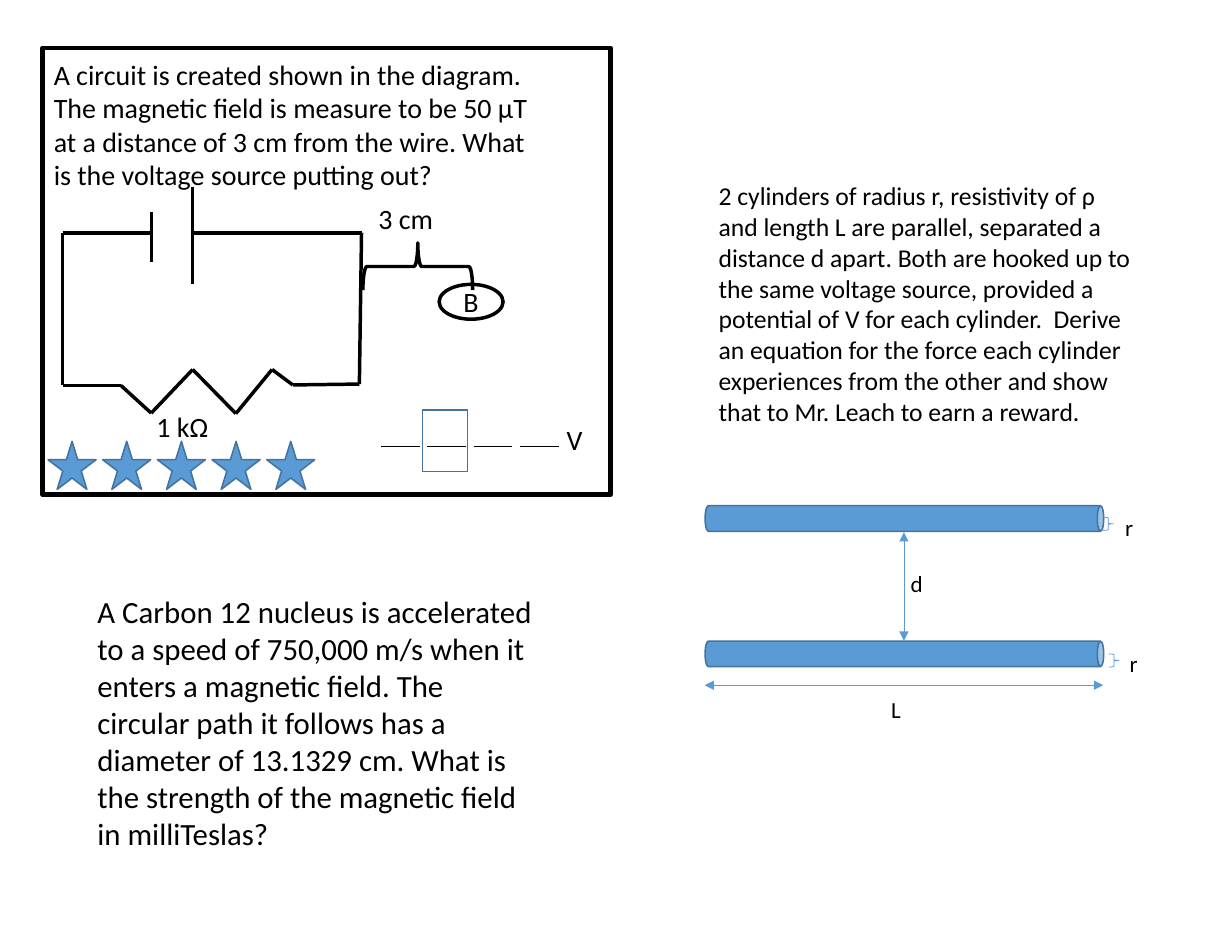
from dataclasses import dataclass
from itertools import pairwise

from lxml import etree
from pptx import Presentation
from pptx.dml.color import RGBColor
from pptx.enum.shapes import MSO_CONNECTOR, MSO_SHAPE as Shp
from pptx.enum.text import MSO_ANCHOR, PP_ALIGN
from pptx.oxml.ns import qn
from pptx.util import Cm, Pt

BLACK, WHITE, BLUE, DARK_BLUE = "000000", "FFFFFF", "5B9BD5", "43739E"


@dataclass
class Label:
    text: str
    x: float
    y: float
    w: float
    h: float
    size: float = 18
    wrap: bool = True


@dataclass
class Figure:
    kind: Shp
    x: float
    y: float
    w: float
    h: float
    line: str
    weight: float
    fill: str | None = None
    rotation: float = 0


def color(hex_code: str) -> RGBColor:
    return RGBColor.from_string(hex_code)


def style_text(p, size: float) -> None:
    for r in p.runs:
        r.font.name = "Calibri"
        r.font.size = Pt(size)
        r.font.color.rgb = color(BLACK)


def add_label(s, label: Label) -> None:
    box = s.shapes.add_textbox(Cm(label.x), Cm(label.y), Cm(label.w), Cm(label.h))
    tf = box.text_frame
    tf.word_wrap = label.wrap
    tf.text = label.text
    style_text(tf.paragraphs[0], label.size)


def add_figure(s, fig: Figure):
    sp = s.shapes.add_shape(fig.kind, Cm(fig.x), Cm(fig.y), Cm(fig.w), Cm(fig.h))
    sp.shadow.inherit = False
    sp.rotation = fig.rotation
    sp.line.color.rgb = color(fig.line)
    sp.line.width = Pt(fig.weight)
    if fig.fill:
        sp.fill.solid()
        sp.fill.fore_color.rgb = color(fig.fill)
    else:
        sp.fill.background()
    return sp


def add_line(s, start: tuple[float, float], end: tuple[float, float],
             line: str, weight: float, arrows: bool = False) -> None:
    cx = s.shapes.add_connector(MSO_CONNECTOR.STRAIGHT, *map(Cm, start + end))
    cx.line.color.rgb = color(line)
    cx.line.width = Pt(weight)
    if arrows:
        ln = cx.line._get_or_add_ln()
        for tag in ("a:headEnd", "a:tailEnd"):
            etree.SubElement(ln, qn(tag), type="triangle")
    etree.SubElement(cx._element.spPr, qn("a:effectLst"))


def draw_circuit(s) -> None:
    add_figure(s, Figure(Shp.RECTANGLE, 0.97, 1.09, 12.88, 10.13, BLACK, 3))
    add_label(s, Label(
        "A circuit is created shown in the diagram. The magnetic field is measure "
        "to be 50 µT at a distance of 3 cm from the wire. What is the voltage "
        "source putting out?", 0.97, 1.17, 11.43, 3.33))

    # Battery plates
    add_line(s, (3.43, 4.8), (3.43, 5.94), BLACK, 2.25)
    add_line(s, (4.37, 4.24), (4.37, 6.45), BLACK, 2.25)

    # Wire from plate to plate, through the resistor zigzag
    wire = [(4.37, 5.28), (8.2, 5.28), (8.15, 8.71), (6.64, 8.73),
            (6.17, 8.38), (5.35, 9.38), (4.37, 8.38), (3.43, 9.37),
            (2.74, 8.74), (1.42, 8.74), (1.42, 5.28), (3.43, 5.28)]
    for start, end in pairwise(wire):
        add_line(s, start, end, BLACK, 2.25)

    # Field point and its distance from the wire
    point = add_figure(s, Figure(Shp.OVAL, 9.96, 6.45, 1.45, 0.79, BLACK, 2.25, WHITE))
    tf = point.text_frame
    tf.text = "B"
    tf.vertical_anchor = MSO_ANCHOR.MIDDLE
    tf.paragraphs[0].alignment = PP_ALIGN.CENTER
    style_text(tf.paragraphs[0], 18)
    add_label(s, Label("1 kΩ", 3.3, 9.17, 3.78, 1.02))
    add_figure(s, Figure(Shp.LEFT_BRACE, 8.94, 4.8, 1.07, 2.49, BLACK, 2.25, rotation=90))
    add_label(s, Label("3 cm", 8.33, 4.45, 3.66, 1.02))


def draw_cylinders(s) -> None:
    add_label(s, Label(
        "2 cylinders of radius r, resistivity of ρ and length L are parallel, "
        "separated a distance d apart. Both are hooked up to the same voltage "
        "source, provided a potential of V for each cylinder.  Derive an equation "
        "for the force each cylinder experiences from the other and show that to "
        "Mr. Leach to earn a reward.", 16.05, 3.96, 9.86, 5.89, 16.5))
    for y in (7.24, 10.31):
        add_figure(s, Figure(Shp.CAN, 20.22, y, 0.58, 9.04, DARK_BLUE, 1, BLUE, 90))

    # Dimensions d, L and r
    add_line(s, (20.5, 12.07), (20.5, 14.53), BLUE, 0.5, arrows=True)
    add_line(s, (25.02, 15.54), (15.98, 15.54), BLUE, 0.5, arrows=True)
    for text, x, y in (("L", 19.96, 15.65), ("d", 20.4, 12.78),
                       ("r", 25.27, 11.53), ("r", 25.37, 14.61)):
        add_label(s, Label(text, x, y, 2.13, 0.89, 14.8))
    for x, y in ((25.02, 11.73), (25.15, 14.83)):
        add_figure(s, Figure(Shp.RIGHT_BRACE, x, y, 0.23, 0.3, BLUE, 0.5))


def draw_answer_row(s) -> None:
    # Difficulty stars
    for i in range(5):
        add_figure(s, Figure(Shp.STAR_5_POINT, 1.09 + 1.24 * i, 10.01, 1.09, 1.09,
                             DARK_BLUE, 1, BLUE))
    # Answer blanks, with the second digit boxed
    for i in range(4):
        x = 8.64 + 1.05 * i
        add_line(s, (x, 10.13), (x + 0.88, 10.13), BLACK, 1)
    add_label(s, Label("V", 12.6, 9.45, 0.89, 1.02, wrap=False))
    add_figure(s, Figure(Shp.RECTANGLE, 9.58, 9.3, 1.02, 1.4, DARK_BLUE, 1))


def main() -> None:
    prs = Presentation()
    prs.slide_width, prs.slide_height = Cm(27.94), Cm(21.59)
    s = prs.slides.add_slide(prs.slide_layouts[6])
    draw_circuit(s)
    add_label(s, Label(
        "A Carbon 12 nucleus is accelerated to a speed of 750,000 m/s when it "
        "enters a magnetic field. The circular path it follows has a diameter of "
        "13.1329 cm. What is the strength of the magnetic field in milliTeslas?",
        1.96, 13.31, 10.46, 6.17, 19.8))
    draw_cylinders(s)
    draw_answer_row(s)
    prs.save("out.pptx")


if __name__ == "__main__":
    main()
